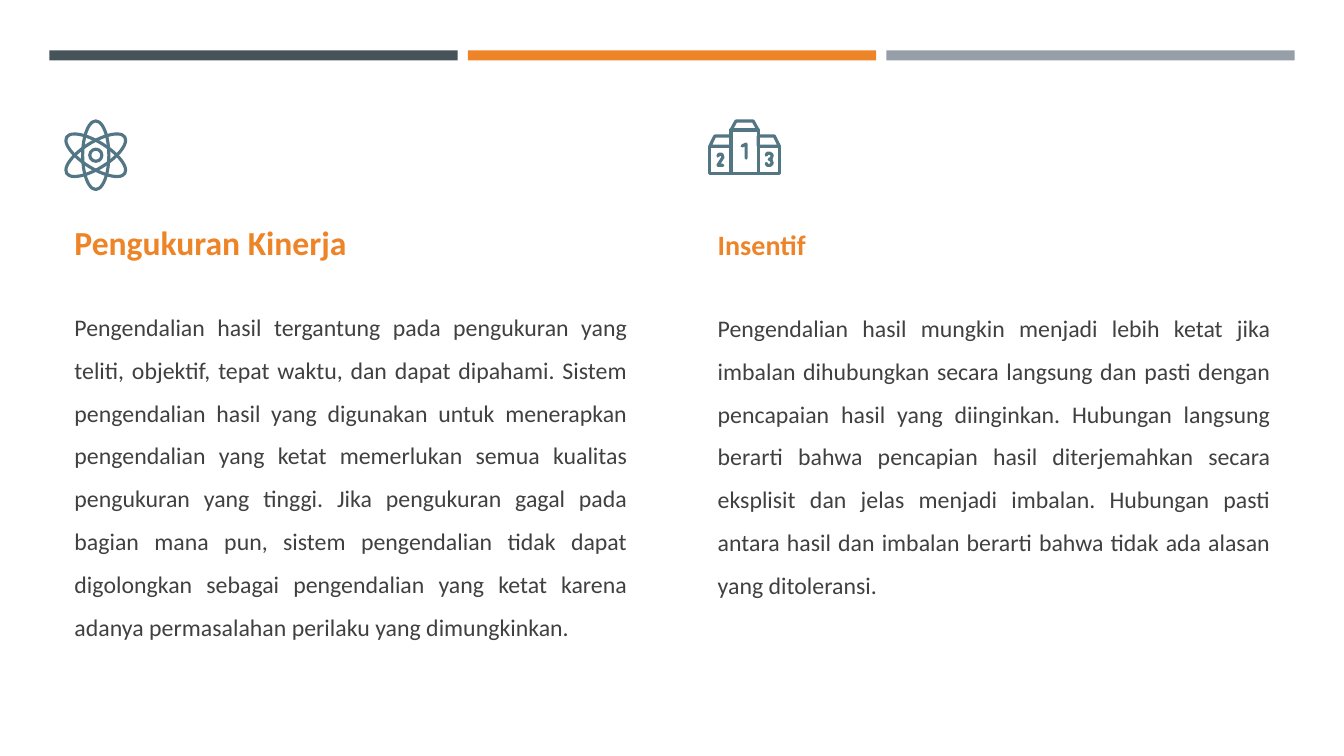
"""Build a slide on performance measurement and incentives."""
from pptx import Presentation
from pptx.dml.color import RGBColor
from pptx.enum.shapes import MSO_SHAPE
from pptx.enum.text import MSO_ANCHOR, PP_ALIGN
from pptx.oxml.ns import qn
from pptx.util import Pt

PX = 9144
RECTANGLE, OVAL = MSO_SHAPE.RECTANGLE, MSO_SHAPE.OVAL
TOP, MIDDLE = MSO_ANCHOR.TOP, MSO_ANCHOR.MIDDLE
LEFT, JUSTIFY = PP_ALIGN.LEFT, PP_ALIGN.JUSTIFY
SLATE = RGBColor(0x46, 0x53, 0x59)
ORANGE = RGBColor(0xED, 0x84, 0x28)
GRAY = RGBColor(0x96, 0x9F, 0xA7)
TEAL = RGBColor(0x53, 0x76, 0x85)
INK = RGBColor(0x40, 0x40, 0x40)

BAR_COLORS = [SLATE, ORANGE, GRAY]
BAR_LEFT, BAR_TOP, BAR_WIDTH, BAR_HEIGHT, BAR_STEP = 49, 50, 405, 10, 415
TEXT_WIDTH, TITLE_HEIGHT = 568, 61

COLUMNS = [
    {"left": 64, "title": "Pengukuran Kinerja", "title_top": 210, "title_size": 24,
     "body_top": 291, "body_height": 367,
     "body": "Pengendalian hasil tergantung pada pengukuran yang teliti, objektif, "
             "tepat waktu, dan dapat dipahami. Sistem pengendalian hasil yang digunakan "
             "untuk menerapkan pengendalian yang ketat memerlukan semua kualitas "
             "pengukuran yang tinggi. Jika pengukuran gagal pada bagian mana pun, sistem "
             "pengendalian tidak dapat digolongkan sebagai pengendalian yang ketat karena "
             "adanya permasalahan perilaku yang dimungkinkan."},
    {"left": 702, "title": "Insentif", "title_top": 212, "title_size": 20,
     "body_top": 292, "body_height": 321,
     "body": "Pengendalian hasil mungkin menjadi lebih ketat jika imbalan dihubungkan "
             "secara langsung dan pasti dengan pencapaian hasil yang diinginkan. Hubungan "
             "langsung berarti bahwa pencapian hasil diterjemahkan secara eksplisit dan "
             "jelas menjadi imbalan. Hubungan pasti antara hasil dan imbalan berarti bahwa "
             "tidak ada alasan yang ditoleransi."},
]

ATOM_CENTER = (95, 154)
ATOM_RINGS = [(26, 68, 0), (26, 68, 58), (26, 68, -58), (12, 12, 0)]

PODIUM_BLOCKS = [(704, 145, 725, 172), (752, 145, 773, 172), (725, 129, 752, 172)]
PODIUM_LIDS = [
    [(704, 145), (709, 135), (725, 135), (725, 145)],
    [(752, 145), (752, 135), (768, 135), (773, 145)],
    [(725, 129), (730, 120), (747, 120), (752, 129)],
]
PODIUM_DIGITS = [
    [(736, 145), (740, 143), (740, 157)],
    [(712, 155), (713, 153), (716, 153), (717, 156), (712, 164), (717, 164)],
    [(760, 154), (761, 152), (764, 152), (766, 154), (765, 157), (763, 158),
     (765, 159), (766, 162), (764, 164), (761, 164), (760, 162)],
]


def add_preset(page, kind, left, top, width, height):
    shape = page.shapes.add_shape(kind, *(round(v * PX) for v in (left, top, width, height)))
    shape.shadow.inherit = False
    return shape


def add_bar(page, left, color):
    bar = add_preset(page, RECTANGLE, left, BAR_TOP, BAR_WIDTH, BAR_HEIGHT)
    bar.fill.solid()
    bar.fill.fore_color.rgb = color
    bar.line.fill.background()


def outline(shape):
    shape.shadow.inherit = False
    shape.fill.background()
    shape.line.color.rgb = TEAL
    shape.line.width = Pt(2.25)
    shape._element.spPr.find(qn("a:ln")).set("cap", "rnd")


def draw_stroke(page, points, close):
    builder = page.shapes.build_freeform(*points[0], scale=PX)
    builder.add_line_segments(points[1:], close=close)
    outline(builder.convert_to_shape())


def draw_atom(page):
    x, y = ATOM_CENTER
    for width, height, angle in ATOM_RINGS:
        ring = add_preset(page, OVAL, x - width / 2, y - height / 2, width, height)
        ring.rotation = angle
        outline(ring)


def draw_podium(page):
    for left, top, right, bottom in PODIUM_BLOCKS:
        outline(add_preset(page, RECTANGLE, left, top, right - left, bottom - top))
    for lid in PODIUM_LIDS:
        draw_stroke(page, lid, True)
    for digit in PODIUM_DIGITS:
        draw_stroke(page, digit, False)


def add_text(page, text, place, anchor, color, para_format, font_format):
    box = page.shapes.add_textbox(*(v * PX for v in place))
    frame = box.text_frame
    frame.word_wrap = True
    frame.vertical_anchor = anchor
    para = frame.paragraphs[0]
    span = para.add_run()
    span.text = text
    span.font.color.rgb = color
    for target, values in ((para, para_format), (span.font, font_format)):
        for name, value in values.items():
            setattr(target, name, value)


def main():
    deck = Presentation()
    deck.slide_width, deck.slide_height = 1333 * PX, 750 * PX
    page = deck.slides.add_slide(deck.slide_layouts[6])
    for index, color in enumerate(BAR_COLORS):
        add_bar(page, BAR_LEFT + index * BAR_STEP, color)
    for column in COLUMNS:
        add_text(page, column["title"],
                 (column["left"], column["title_top"], TEXT_WIDTH, TITLE_HEIGHT),
                 MIDDLE, ORANGE, {"alignment": LEFT, "space_after": Pt(6)},
                 {"name": "Calibri", "size": Pt(column["title_size"]), "bold": True})
        add_text(page, column["body"],
                 (column["left"], column["body_top"], TEXT_WIDTH, column["body_height"]),
                 TOP, INK,
                 {"alignment": JUSTIFY, "line_spacing": 1.5, "space_after": Pt(6)},
                 {"name": "Calibri", "size": Pt(17)})
    draw_atom(page)
    draw_podium(page)
    deck.save("out.pptx")


if __name__ == "__main__":
    main()
